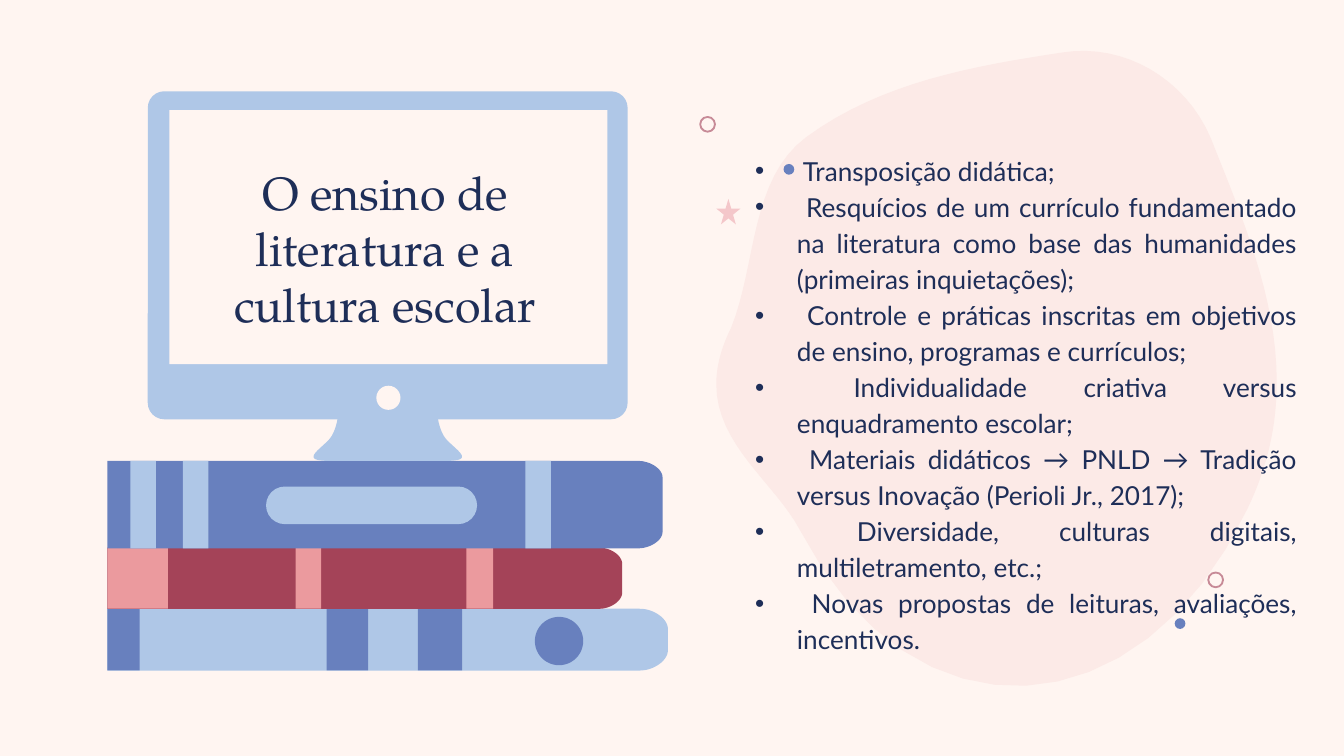
"""Build a slide with a screen on a pile of books beside a bulleted list."""
from lxml.etree import SubElement
from pptx import Presentation
from pptx.dml.color import RGBColor as RGB
from pptx.enum.shapes import MSO_SHAPE as SHAPE
from pptx.enum.text import PP_ALIGN as ALIGN
from pptx.oxml.ns import qn
from pptx.util import Inches, Pt

THEME = {
    "cream": "FFF5F1", "blush": "FCEAE7", "navy": "1E2E58", "blue": "6880BE",
    "sky": "AFC7E7", "wine": "A44358", "rose": "EB9A9E", "pink": "F4C7CA", "mauve": "C78A97",
    "title": ("TeX Gyre Pagella", Pt(25)), "body": ("Lato", Pt(14)),
}

prs = Presentation()
prs.slide_width, prs.slide_height = Inches(10), Inches(10) * 9 // 16
CELL = prs.slide_width / 100  # the grid has 100 columns of square cells
s = prs.slides.add_slide(prs.slide_layouts[6])
s.background.fill.solid()
s.background.fill.fore_color.rgb = RGB.from_string(THEME["cream"])


def add_preset(kind, x, y, w, h, color):
    sp = s.shapes.add_shape(kind, *(round(v * CELL) for v in (x, y, w, h)))
    sp.shadow.inherit = False
    sp.fill.solid()
    sp.fill.fore_color.rgb = RGB.from_string(THEME[color])
    sp.line.fill.background()
    return sp


def add_outline(start, segments, color, steps=16):
    points = [start]
    for seg in segments:
        if len(seg) == 2:
            points.append(seg)
            continue
        (x0, y0), (x1, y1, x2, y2, x3, y3) = points[-1], seg
        for i in range(1, steps + 1):
            t = i / steps
            a, b, c, d = (1 - t) ** 3, 3 * t * (1 - t) ** 2, 3 * t * t * (1 - t), t ** 3
            points.append((a * x0 + b * x1 + c * x2 + d * x3, a * y0 + b * y1 + c * y2 + d * y3))
    points = [(x * CELL, y * CELL) for x, y in points]
    builder = s.shapes.build_freeform(*points[0])
    builder.add_line_segments(points[1:], close=True)
    sp = builder.convert_to_shape()
    sp.shadow.inherit = False
    sp.fill.solid()
    sp.fill.fore_color.rgb = RGB.from_string(THEME[color])
    sp.line.fill.background()


add_outline((53.3, 28.6), [
    (53.3, 33.1, 57.7, 36, 59.5, 39.4), (67.9, 55.7, 84.9, 54.6, 92.8, 37.9),
    (94.4, 34.6, 95, 31.5, 95, 28.4), (95, 22.1, 92.4, 16.1, 90.1, 10.3),
    (88.2, 5.8, 83.6, 3.2, 79.1, 3.9), (72.5, 4.9, 65.6, 6.1, 60, 10.2),
    (55.8, 13.3, 56.3, 19.7, 54.4, 24.4), (53.6, 26, 53.3, 27.4, 53.3, 28.6)], "blush")

for x, y in ((52.1, 8.7), (89.9, 42.6)):
    ring = add_preset(SHAPE.OVAL, x, y, 1.1, 1.1, "cream")
    ring.fill.background()
    ring.line.color.rgb = RGB.from_string(THEME["mauve"])
    ring.line.width = Pt(1)
for x, y in ((58.3, 12.2), (87.4, 46)):
    add_preset(SHAPE.OVAL, x, y, 0.8, 0.8, "blue")
add_preset(SHAPE.STAR_5_POINT, 53.3, 14.8, 1.8, 1.9, "pink")

SPINE = 8
books = [
    (45.3, 49.9, 49.7, 2.1, 1.5, "sky", "blue", [(8, 2.4), (24.3, 3.1), (31.1, 3.3)]),
    (40.75, 45.3, 46.3, 1.7, 1.2, "wine", "rose", [(8, 4.5), (22, 1.9), (34.7, 2)]),
    (34.3, 40.8, 49.3, 1.8, 1.2, "blue", "sky", [(9.7, 1.9), (13.6, 1.9), (39.1, 1.9)]),
]
for top, bottom, right, rx, ry, cover, band, bands in books:
    add_outline((SPINE, top), [
        (right - rx, top), (right - rx / 2, top, right, top + ry / 2, right, top + ry),
        (right, bottom - ry), (right, bottom - ry / 2, right - rx / 2, bottom, right - rx, bottom),
        (SPINE, bottom)], cover)
    for x, w in bands:
        add_preset(SHAPE.RECTANGLE, x, top, w, bottom - top, band)
label = add_preset(SHAPE.ROUNDED_RECTANGLE, 19.8, 36.2, 15.7, 2.8, "sky")
label.adjustments[0] = 0.5
add_preset(SHAPE.OVAL, 39.8, 45.9, 3.6, 3.6, "blue")

add_outline((33.3, 32.8), [
    (32.5, 32, 32.5, 30.3, 32.5, 30.3), (25.2, 30.3), (25.2, 30.3, 25.2, 32, 24.4, 32.8),
    (23.6, 33.6, 22.4, 34.3, 24.5, 34.3), (33.2, 34.3),
    (35.3, 34.3, 34.1, 33.6, 33.3, 32.8)], "sky")
frame = add_preset(SHAPE.ROUNDED_RECTANGLE, 11, 6.8, 35.7, 24.4, "sky")
frame.adjustments[0] = 0.05
add_preset(SHAPE.RECTANGLE, 12.6, 8.2, 32.6, 18.9, "cream")
add_preset(SHAPE.OVAL, 28, 28.7, 1.8, 1.8, "cream")

bullets = [
    " Transposição didática;",
    " Resquícios de um currículo fundamentado na literatura como base das humanidades "
    "(primeiras inquietações);",
    " Controle e práticas inscritas em objetivos de ensino, programas e currículos;",
    " Individualidade criativa versus enquadramento escolar;",
    " Materiais didáticos → PNLD → Tradição versus Inovação (Perioli Jr., 2017);",
    " Diversidade, culturas digitais, multiletramento, etc.;",
    " Novas propostas de leituras, avaliações, incentivos.",
]
texts = [
    ("body", (55.2, 10.2, 42.3, 13.5), bullets, ALIGN.JUSTIFY),
    ("title", (15, 11.2, 27.3, 12.6), ["O ensino de literatura e a cultura escolar"], ALIGN.CENTER),
]
for role, box, lines, align in texts:
    tf = s.shapes.add_textbox(*(round(v * CELL) for v in box)).text_frame
    tf.word_wrap = True
    tf.margin_left = tf.margin_right = tf.margin_top = tf.margin_bottom = round(CELL)
    tf.text = "\n".join(lines)
    for p in tf.paragraphs:
        p.alignment = align
        font = p.runs[0].font
        font.name, font.size = THEME[role]
        font.color.rgb = RGB.from_string(THEME["navy"])
        if role == "body":
            p.line_spacing = 1.15
            pPr = p._p.get_or_add_pPr()
            indent = round(3.12 * CELL)
            pPr.set("marL", str(indent))
            pPr.set("indent", str(-indent))
            SubElement(SubElement(pPr, qn("a:buClr")), qn("a:srgbClr"), val=THEME["navy"])
            SubElement(pPr, qn("a:buFont"), typeface="Arial")
            SubElement(pPr, qn("a:buChar"), char="•")

prs.save("out.pptx")
